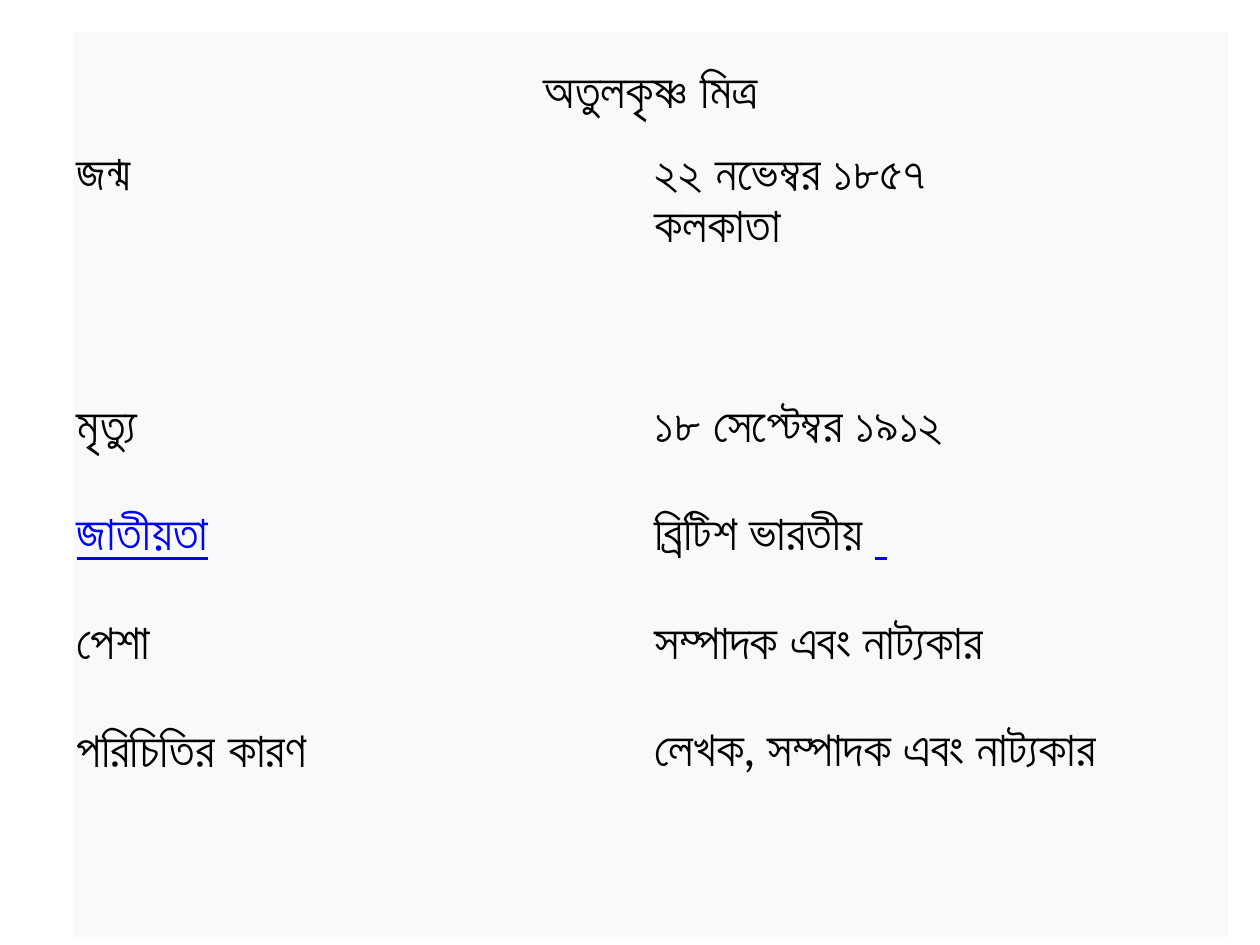
from pptx import Presentation
from pptx.dml.color import RGBColor
from pptx.enum.text import PP_ALIGN
from pptx.util import Inches, Pt

BLACK, LINK, PANEL = "000000", "0000FF", "F8F9FA"
NO_GRID_STYLE = "{2D5ABB26-0587-4C30-8999-92F81FD0307C}"
ROW_HEIGHTS = [1.06, 2, 0.86, 0.86, 0.86, 1.55]

NAME = "অতুলকৃষ্ণ মিত্র"
# Each fact: label, label colour, then value lines made of (text, colour) runs
FACTS = [
    ("জন্ম", BLACK, [[("২২ নভেম্বর ১৮৫৭", BLACK)], [("কলকাতা", BLACK)]]),
    ("মৃত্যু", BLACK, [[("১৮ সেপ্টেম্বর ১৯১২", BLACK)]]),
    ("জাতীয়তা", LINK, [[("ব্রিটিশ ভারতীয় ", BLACK), (" ", LINK)]]),
    ("পেশা", BLACK, [[("সম্পাদক এবং নাট্যকার", BLACK)]]),
    ("পরিচিতির কারণ", BLACK, [[("লেখক, সম্পাদক এবং নাট্যকার", BLACK)]]),
]


def rgb(value):
    return RGBColor.from_string(value)


def fill_cell(cell, lines, bold=False, align=PP_ALIGN.LEFT, top=0.03):
    cell.fill.solid()
    cell.fill.fore_color.rgb = rgb(PANEL)
    cell.margin_left = cell.margin_right = cell.margin_bottom = Inches(0.03)
    cell.margin_top = Inches(top)
    tf = cell.text_frame
    for i, runs in enumerate(lines):
        p = tf.add_paragraph() if i else tf.paragraphs[0]
        p.alignment = align
        p.line_spacing = Pt(18)
        p.space_before = p.space_after = Pt(6)
        for text, color in runs:
            r = p.add_run()
            r.text = text
            r.font.name = "Lato"
            r.font.size = Pt(28)
            r.font.bold = bold
            r.font.underline = color == LINK
            r.font.color.rgb = rgb(color)


def add_profile_table(s, left, top, width):
    height = Inches(sum(ROW_HEIGHTS))
    frame = s.shapes.add_table(len(ROW_HEIGHTS), 2, left, top, width, height)
    table = frame.table
    table.first_row = table.horz_banding = False
    table._tbl.tblPr[0].text = NO_GRID_STYLE
    for row, row_height in zip(table.rows, ROW_HEIGHTS):
        row.height = Inches(row_height)

    heading = table.cell(0, 0)
    heading.merge(table.cell(0, 1))
    fill_cell(heading, [[(NAME, BLACK)]], True, PP_ALIGN.CENTER, top=0.44)
    for row, (label, color, value) in enumerate(FACTS, start=1):
        fill_cell(table.cell(row, 0), [[(label, color)]], bold=True)
        fill_cell(table.cell(row, 1), value)


def main():
    prs = Presentation()
    prs.slide_width, prs.slide_height = Inches(10), Inches(7.5)
    s = prs.slides.add_slide(prs.slide_layouts[6])
    add_profile_table(s, Inches(0.58), Inches(0.25), Inches(9.17))
    prs.save("out.pptx")


if __name__ == "__main__":
    main()
